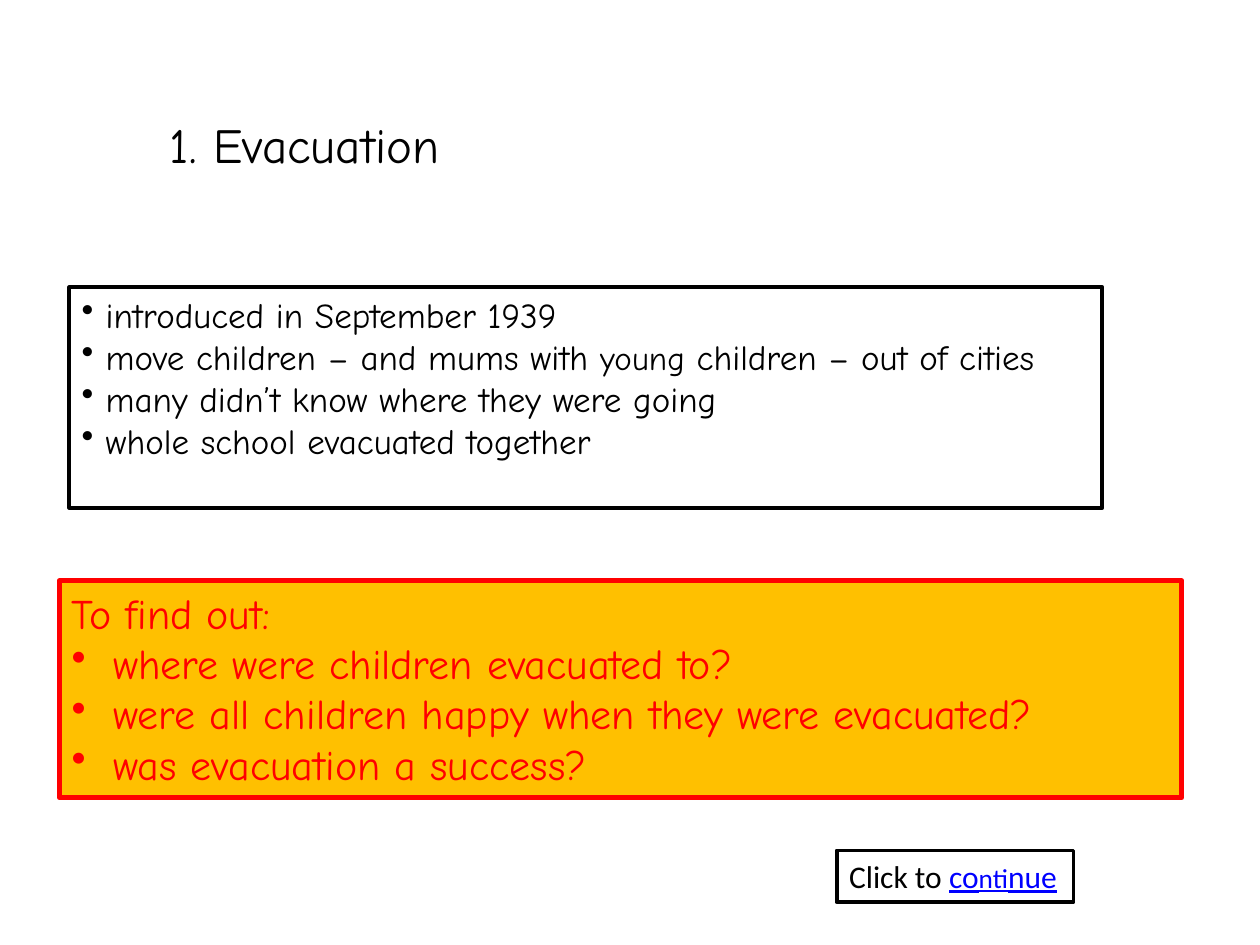
from pptx import Presentation
from pptx.dml.color import RGBColor
from pptx.enum.text import MSO_ANCHOR
from pptx.oxml.ns import qn
from pptx.util import Inches, Pt
from lxml.etree import SubElement

COLORS = {"black": "000000", "red": "FF0000", "amber": "FFC000", "link": "0000FF"}
BODY_FONT = "Comic Neue"
LINK = {"color": "link", "underline": True}

TITLE = ["1. Evacuation"]
FACTS = [
    "introduced in September 1939",
    [("move children – and mums with ", {}), ("young", {"size": 18.9}),
     (" children – out of cities", {})],
    "many didn’t know where they were going",
    "whole school evacuated together",
]
QUESTIONS = [
    "To find out:",
    "where were children evacuated to?",
    "were all children happy when they were evacuated?",
    "was evacuation a success?",
]
CONTINUE = [[("Click to ", {}), ("co", LINK), ("nti", {**LINK, "size": 15.6}), ("nue", LINK)]]

BOXES = [
    (TITLE, (1.25, 0.86, 6.33, 0.57), {"size": 28}),
    (FACTS, (0.55, 2.28, 8.2, 1.75),
     {"size": 20, "line": "black", "indent": 0.19, "first_bullet": 0}),
    (QUESTIONS, (0.47, 4.61, 8.91, 1.72),
     {"size": 24, "color": "red", "fill": "amber", "line": "red", "weight": 3,
      "indent": 0.33, "first_bullet": 1}),
    (CONTINUE, (6.64, 6.75, 1.88, 0.41), {"size": 18, "font": "Calibri", "line": "black"}),
]


def rgb(name):
    return RGBColor.from_string(COLORS[name])


def add_run(p, text, size, font=BODY_FONT, color="black", underline=None):
    r = p.add_run()
    r.text = text
    r.font.size = Pt(size)
    r.font.name = font
    r.font.color.rgb = rgb(color)
    r.font.underline = underline


def add_bullet(p, indent):
    pPr = p._p.get_or_add_pPr()
    pPr.set("marL", str(Inches(indent)))
    pPr.set("indent", str(-Inches(indent)))
    SubElement(pPr, qn("a:buChar")).set("char", "•")


def add_box(slide, paragraphs, at, fill=None, line=None, weight=2.25,
            indent=0, first_bullet=None, **style):
    sp = slide.shapes.add_textbox(*map(Inches, at))
    if fill:
        sp.fill.solid()
        sp.fill.fore_color.rgb = rgb(fill)
    if line:
        sp.line.color.rgb = rgb(line)
        sp.line.width = Pt(weight)
    tf = sp.text_frame
    tf.word_wrap = True
    tf.vertical_anchor = MSO_ANCHOR.TOP
    for i, content in enumerate(paragraphs):
        p = tf.add_paragraph() if i else tf.paragraphs[0]
        if first_bullet is not None and i >= first_bullet:
            add_bullet(p, indent)
        runs = [(content, {})] if isinstance(content, str) else content
        for text, extra in runs:
            add_run(p, text, **{**style, **extra})


prs = Presentation()
prs.slide_width, prs.slide_height = Inches(10), Inches(7.5)
slide = prs.slides.add_slide(prs.slide_layouts[6])
for paragraphs, at, options in BOXES:
    add_box(slide, paragraphs, at, **options)
prs.save("out.pptx")
